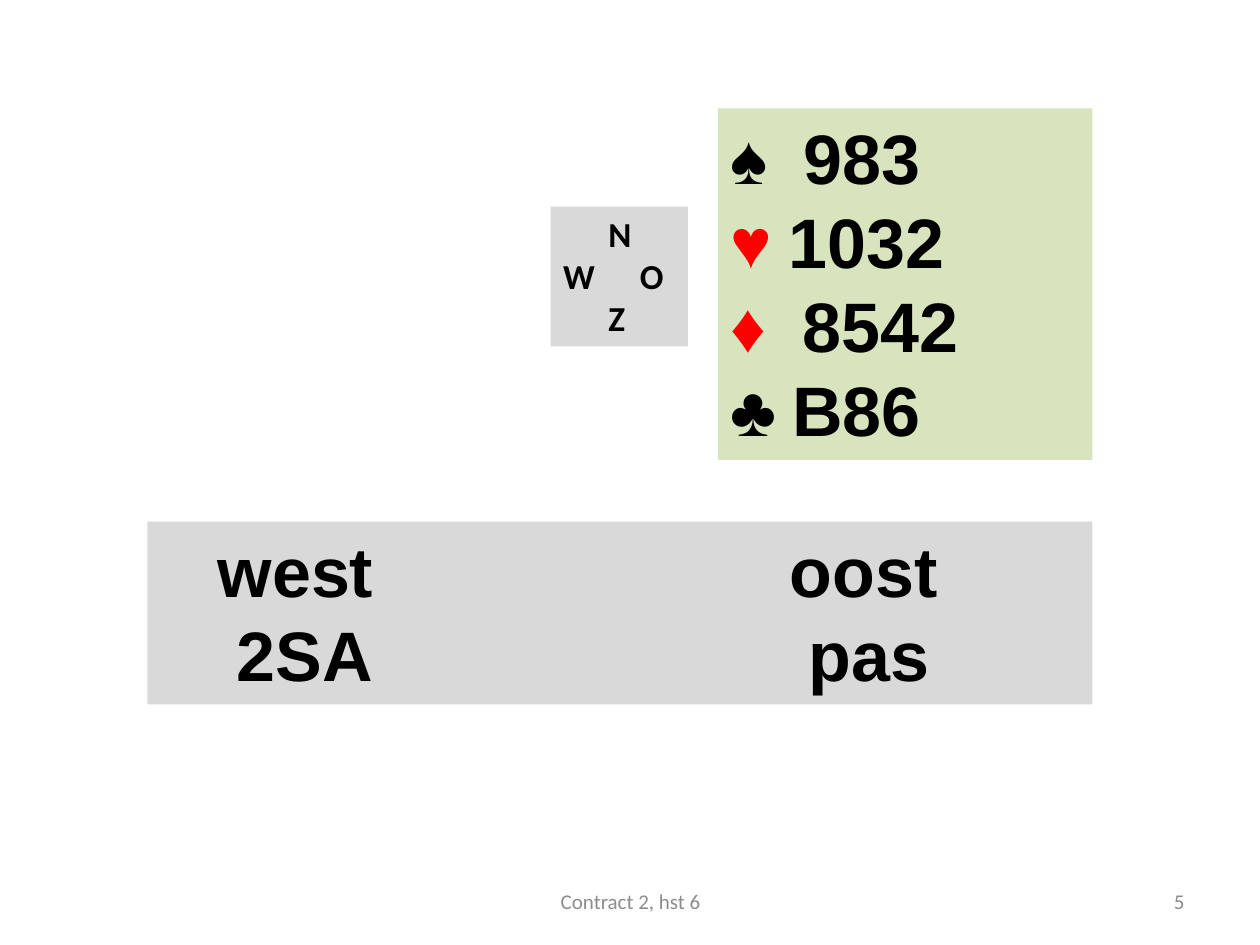
from dataclasses import dataclass

from lxml.etree import SubElement
from pptx import Presentation
from pptx.dml.color import RGBColor
from pptx.enum.shapes import MSO_SHAPE
from pptx.enum.text import MSO_ANCHOR, MSO_AUTO_SIZE, PP_ALIGN
from pptx.oxml.ns import qn
from pptx.util import Inches, Pt


@dataclass(frozen=True)
class Theme:
    ink: str = "000000"
    red: str = "FF0000"
    hand: str = "D7E4BD"
    panel: str = "D9D9D9"
    muted: str = "8C8C8C"
    card_font: str = "Arial"
    label_font: str = "Calibri"
    card_size: int = 40
    compass_size: int = 20
    footer_size: int = 12


THEME = Theme()


def set_tab_stops(paragraph, stops):
    tab_list = SubElement(paragraph._p.get_or_add_pPr(), qn("a:tabLst"))
    for stop in stops:
        SubElement(tab_list, qn("a:tab"), pos=str(Inches(stop)), algn="l")


def write_line(paragraph, parts, font, size, bold=True, align=PP_ALIGN.LEFT, stops=()):
    paragraph.alignment = align
    if stops:
        set_tab_stops(paragraph, stops)
    for text, color in parts:
        run = paragraph.add_run()
        run.text = text
        run.font.name = font
        run.font.size = Pt(size)
        run.font.bold = bold
        run.font.color.rgb = RGBColor.from_string(color)


def add_panel(slide, box, fill, lines, font, size):
    shape = slide.shapes.add_shape(MSO_SHAPE.RECTANGLE, *map(Inches, box))
    shape.shadow.inherit = False
    shape.fill.solid()
    shape.fill.fore_color.rgb = RGBColor.from_string(fill)
    shape.line.fill.background()
    frame = shape.text_frame
    frame.word_wrap = True
    frame.vertical_anchor = MSO_ANCHOR.TOP
    frame.auto_size = MSO_AUTO_SIZE.SHAPE_TO_FIT_TEXT
    for index, (parts, stops) in enumerate(lines):
        paragraph = frame.add_paragraph() if index else frame.paragraphs[0]
        write_line(paragraph, parts, font, size, stops=stops)


def add_hand(slide, box):
    suits = [
        ("♠", "983", THEME.ink, 0.58),
        ("♥", "1032", THEME.red, 0.46),
        ("♦", "8542", THEME.red, 0.57),
        ("♣", "B86", THEME.ink, 0.49),
    ]
    lines = [
        ([(suit, color), (f"\t{cards}", THEME.ink)], [stop])
        for suit, cards, color, stop in suits
    ]
    add_panel(slide, box, THEME.hand, lines, THEME.card_font, THEME.card_size)


def add_compass(slide, box):
    rows = [("\tN", 0.36), ("W\tO", 0.61), ("\tZ", 0.36)]
    lines = [([(text, THEME.ink)], [stop]) for text, stop in rows]
    add_panel(slide, box, THEME.panel, lines, THEME.label_font, THEME.compass_size)


def add_auction(slide, box):
    rows = [("west", "oost", 0.46, 5), ("2SA", "pas", 0.61, 5.15)]
    lines = [
        ([(f"\t{west}\t{east}", THEME.ink)], [west_stop, east_stop])
        for west, east, west_stop, east_stop in rows
    ]
    add_panel(slide, box, THEME.panel, lines, THEME.card_font, THEME.card_size)


def add_footer(slide, box, text, align):
    frame = slide.shapes.add_textbox(*map(Inches, box)).text_frame
    frame.word_wrap = True
    frame.vertical_anchor = MSO_ANCHOR.MIDDLE
    write_line(frame.paragraphs[0], [(text, THEME.muted)], THEME.label_font,
               THEME.footer_size, bold=False, align=align)


def main():
    presentation = Presentation()
    presentation.slide_width = Inches(10)
    presentation.slide_height = Inches(7.5)
    slide = presentation.slides.add_slide(presentation.slide_layouts[6])
    add_hand(slide, (5.7, 0.86, 2.97, 2.79))
    add_compass(slide, (4.37, 1.64, 1.09, 1.11))
    add_auction(slide, (1.17, 4.14, 7.5, 1.45))
    add_footer(slide, (7.17, 6.95, 2.33, 0.4), "5", PP_ALIGN.RIGHT)
    add_footer(slide, (3.42, 6.95, 3.17, 0.4), "Contract 2, hst 6", PP_ALIGN.CENTER)
    presentation.save("out.pptx")


if __name__ == "__main__":
    main()
